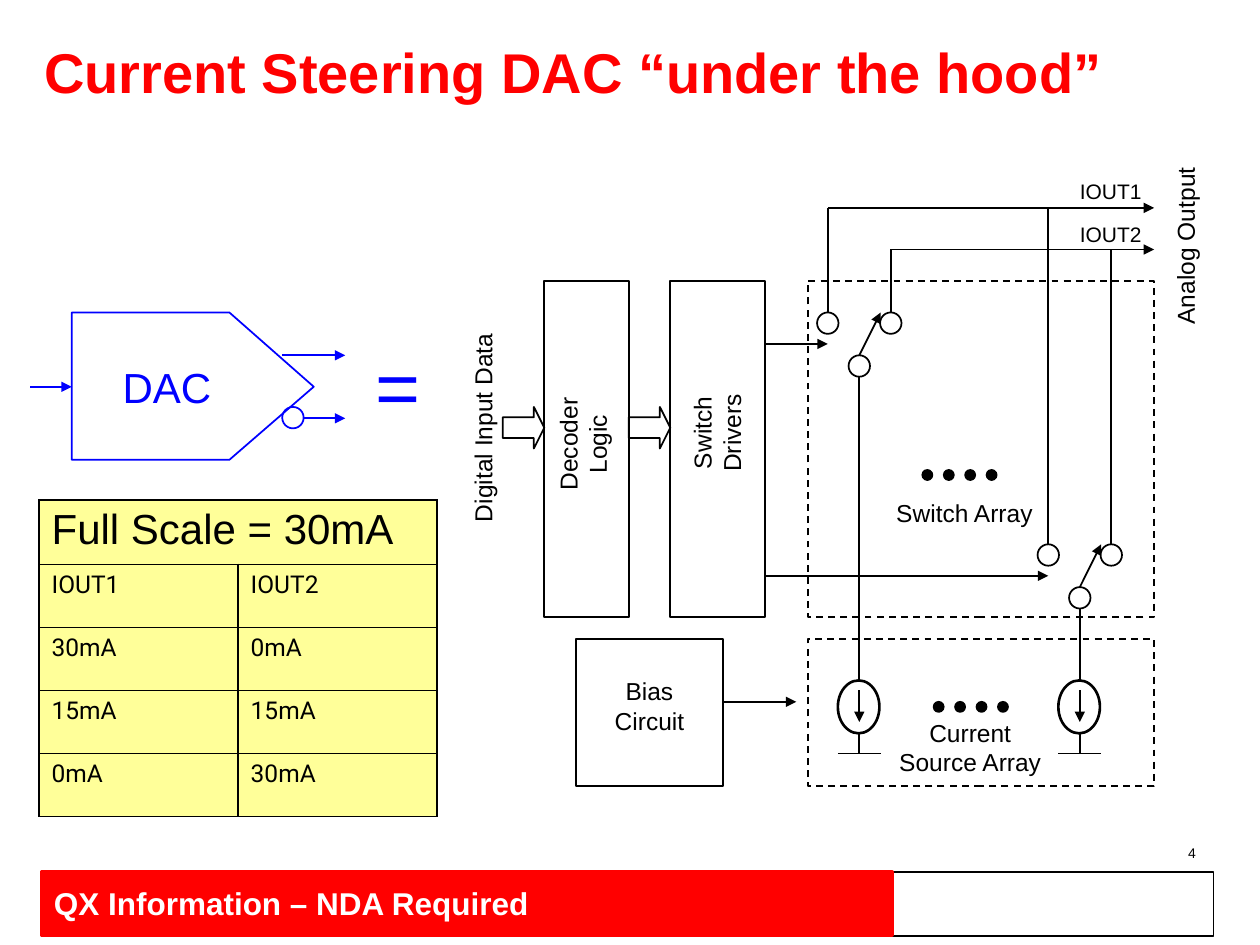
from copy import deepcopy
from dataclasses import dataclass

from lxml import etree
from pptx import Presentation
from pptx.dml.color import RGBColor
from pptx.enum.dml import MSO_LINE
from pptx.enum.shapes import MSO_CONNECTOR, MSO_SHAPE
from pptx.enum.text import MSO_ANCHOR, PP_ALIGN
from pptx.oxml.ns import qn
from pptx.util import Cm, Pt

RECTANGLE, ELLIPSE, ARROW = MSO_SHAPE.RECTANGLE, MSO_SHAPE.OVAL, MSO_SHAPE.RIGHT_ARROW
LEFT, CENTER, RIGHT = PP_ALIGN.LEFT, PP_ALIGN.CENTER, PP_ALIGN.RIGHT
TOP, MIDDLE = MSO_ANCHOR.TOP, MSO_ANCHOR.MIDDLE
DASH = MSO_LINE.DASH
STRAIGHT = MSO_CONNECTOR.STRAIGHT

BLACK, WHITE, RED, BLUE, YELLOW = "000000", "FFFFFF", "FF0000", "0000FF", "FFFF99"
TERMINAL = 0.17
RAIL_1, RAIL_2, RAIL_END = 1.65, 1.98, 9.16
DRIVER_EDGE = 6.07
SOURCE_TOP = 5.4


@dataclass(frozen=True)
class Label:
    text: str
    box: tuple[float, float, float, float]
    size: int = 14
    align: int = CENTER
    color: str = BLACK
    rotation: int = 0


@dataclass(frozen=True)
class Block:
    box: tuple[float, float, float, float]
    kind: int = RECTANGLE
    fill: str | None = None
    line: str = BLACK
    width: float = 1
    dash: int | None = None


@dataclass(frozen=True)
class Branch:
    """A switch and the current source below it."""
    center: float
    top: float


LABELS = [
    Label("4", (7.26, 6.65, 2.33, 0.23), 8, RIGHT),
    Label("Decoder\nLogic", (4, 3.24, 1.25, 0.57), rotation=270),
    Label("Digital Input Data", (2.91, 3.23, 1.84, 0.33), rotation=270),
    Label("Switch Drivers", (5.19, 3.15, 1, 0.57), rotation=270),
    Label("Current\nSource Array", (6.24, 5.65, 2.92, 0.57)),
    Label("Bias\nCircuit", (4.49, 5.32, 1.33, 0.57)),
    Label("IOUT1", (8.16, 1.37, 1, 0.3), 12, RIGHT),
    Label("IOUT2", (8.16, 1.71, 1, 0.3), 12, RIGHT),
    Label("Switch Array", (6.99, 3.9, 1.33, 0.57)),
    Label("Analog Output", (8.61, 1.86, 1.59, 0.33), align=RIGHT, rotation=270),
    Label("DAC", (0.66, 2.82, 1.33, 0.5), 24, color=BLUE),
    Label("=", (2.49, 2.64, 1.33, 0.83), 44, color=BLUE),
]
BLOCKS = [
    Block((4.32, 2.23, 0.67, 2.67)),
    Block((5.32, 2.23, 0.75, 2.67)),
    Block((3.99, 3.23, 0.33, 0.33), ARROW),
    Block((4.99, 3.23, 0.33, 0.33), ARROW),
    Block((4.57, 5.07, 1.17, 1.17)),
    Block((6.41, 2.23, 2.75, 2.67), dash=DASH),
    Block((6.41, 5.07, 2.75, 1.17), dash=DASH),
]
BRANCHES = [Branch(6.82, 2.48), Branch(8.57, 4.32)]
DOT_ROWS = [(7.32, 3.73), (7.41, 5.57)]
DAC_OUTLINE = [(0.57, 2.48), (1.82, 2.48), (2.49, 3.07), (1.82, 3.65), (0.57, 3.65)]
DAC_ARROWS = [((0.24, 3.07), (0.57, 3.07)), ((2.24, 2.82), (2.74, 2.82)),
              ((2.41, 3.32), (2.74, 3.32))]
TABLE_ROWS = [("Full Scale = 30mA", ""), ("IOUT1", "IOUT2"), ("30mA", "0mA"),
              ("15mA", "15mA"), ("0mA", "30mA")]


def rgb(color: str) -> RGBColor:
    return RGBColor.from_string(color)


def lengths(*inches: float) -> list[Cm]:
    return [Cm(value * 2.54) for value in inches]


def write(frame, text: str, *, size: int, color: str = BLACK, font: str = "Arial",
          bold: bool = False, align: int = LEFT, anchor: int = TOP) -> None:
    frame.word_wrap = True
    frame.vertical_anchor = anchor
    paragraph = frame.paragraphs[0]
    paragraph.text = text.replace("\n", "\v")
    paragraph.alignment = align
    for run in paragraph.runs:
        run.font.size, run.font.bold, run.font.name = Pt(size), bold, font
        run.font.color.rgb = rgb(color)
    for line_break in paragraph._p.findall(qn("a:br")):
        line_break.append(deepcopy(paragraph.runs[0]._r.rPr))


def style(shape, block: Block) -> None:
    shape.shadow.inherit = False
    if block.fill:
        shape.fill.solid()
        shape.fill.fore_color.rgb = rgb(block.fill)
    else:
        shape.fill.background()
    shape.line.color.rgb = rgb(block.line)
    shape.line.width = Pt(block.width)
    if block.dash:
        shape.line.dash_style = block.dash


def draw_block(slide, block: Block):
    shape = slide.shapes.add_shape(block.kind, *lengths(*block.box))
    style(shape, block)
    if block.kind == ARROW:
        shape.adjustments[1] = 0.25
    return shape


def draw_label(slide, label: Label) -> None:
    shape = slide.shapes.add_textbox(*lengths(*label.box))
    shape.rotation = label.rotation
    write(shape.text_frame, label.text, size=label.size, color=label.color, align=label.align)


def draw_line(slide, start: tuple[float, float], end: tuple[float, float], *,
              color: str = BLACK, arrow: bool = False) -> None:
    connector = slide.shapes.add_connector(STRAIGHT, *lengths(*start, *end))
    connector.line.color.rgb = rgb(color)
    connector.line.width = Pt(1)
    properties = connector._element.spPr
    if arrow:
        etree.SubElement(properties.find(qn("a:ln")), qn("a:tailEnd"), type="triangle")
    etree.SubElement(properties, qn("a:effectLst"))


def draw_branch(slide, branch: Branch) -> None:
    x, top = branch.center, branch.top
    pivot = top + 0.34
    for offset, y, rail in [(-0.25, top, RAIL_1), (0.25, top, RAIL_2), (0, pivot, None)]:
        draw_block(slide, Block((x + offset - TERMINAL / 2, y, TERMINAL, TERMINAL), ELLIPSE))
        if rail:
            draw_line(slide, (x + offset, top), (x + offset, rail))
    draw_line(slide, (x, pivot), (x + 0.17, top), arrow=True)
    draw_line(slide, (x, pivot + TERMINAL), (x, SOURCE_TOP))
    draw_line(slide, (DRIVER_EDGE, top + 0.25), (x - 0.25, top + 0.25), arrow=True)

    draw_block(slide, Block((x - 0.17, SOURCE_TOP, 0.33, 0.42), ELLIPSE, WHITE, width=1.5))
    draw_line(slide, (x, 5.48), (x, 5.73), arrow=True)
    draw_line(slide, (x, 5.82), (x, 5.98))
    draw_line(slide, (x - 0.17, 5.98), (x + 0.17, 5.98))


def draw_dac_symbol(slide) -> None:
    points = [lengths(*point) for point in DAC_OUTLINE]
    builder = slide.shapes.build_freeform(*points[0])
    builder.add_line_segments(points[1:], close=True)
    style(builder.convert_to_shape(), Block((0, 0, 0, 0), line=BLUE))
    draw_block(slide, Block((2.24, 3.23, TERMINAL, TERMINAL), ELLIPSE, line=BLUE))
    for start, end in DAC_ARROWS:
        draw_line(slide, start, end, color=BLUE, arrow=True)


def draw_table(slide) -> None:
    table = slide.shapes.add_table(len(TABLE_ROWS), 2, *lengths(0.31, 3.97, 3.16, 2.51)).table
    table.first_row = table.horz_banding = False
    for row_index, values in enumerate(TABLE_ROWS):
        heading = row_index == 0
        table.rows[row_index].height = lengths(0.51 if heading else 0.5)[0]
        for cell, value in zip(table.rows[row_index].cells, values):
            write(cell.text_frame, value, size=24 if heading else 14,
                  font="Arial" if heading else "Roboto")
            properties = cell._tc.get_or_add_tcPr()
            for side in ("a:lnL", "a:lnR", "a:lnT", "a:lnB"):
                border = etree.SubElement(properties, qn(side), w=str(Pt(1)))
                fill = etree.SubElement(border, qn("a:solidFill"))
                etree.SubElement(fill, qn("a:srgbClr"), val=BLACK)
            cell.fill.solid()
            cell.fill.fore_color.rgb = rgb(YELLOW)
    table.cell(0, 0).merge(table.cell(0, 1))


def main() -> None:
    presentation = Presentation()
    presentation.slide_width, presentation.slide_height = lengths(10, 7.5)
    slide = presentation.slides.add_slide(presentation.slide_layouts[5])
    title = slide.shapes.title
    title.left, title.top, title.width, title.height = lengths(0.25, 0.16, 9.25, 0.89)
    write(title.text_frame, "Current Steering DAC “under the hood”", size=32, color=RED,
          bold=True, anchor=MIDDLE)
    title.text_frame.paragraphs[0].line_spacing = 0.85

    draw_block(slide, Block((0.37, 6.92, 9.26, 0.51), width=0.75))
    banner = draw_block(slide, Block((0.33, 6.92, 6.75, 0.5), fill=RED, line=RED, width=2))
    write(banner.text_frame, "QX Information – NDA Required", size=18, color=WHITE,
          bold=True, anchor=MIDDLE)

    for block in BLOCKS:
        draw_block(slide, block)
    for branch in BRANCHES:
        draw_branch(slide, branch)
    for x, rail in [(6.57, RAIL_1), (7.07, RAIL_2)]:
        draw_line(slide, (x, rail), (RAIL_END, rail), arrow=True)
    draw_line(slide, (5.74, 5.57), (6.32, 5.57), arrow=True)
    for left, top in DOT_ROWS:
        for index in range(4):
            draw_block(slide, Block((left + index * 0.17, top, 0.08, 0.08), ELLIPSE, BLACK))
    draw_dac_symbol(slide)
    for label in LABELS:
        draw_label(slide, label)
    draw_table(slide)
    presentation.save("out.pptx")


if __name__ == "__main__":
    main()
